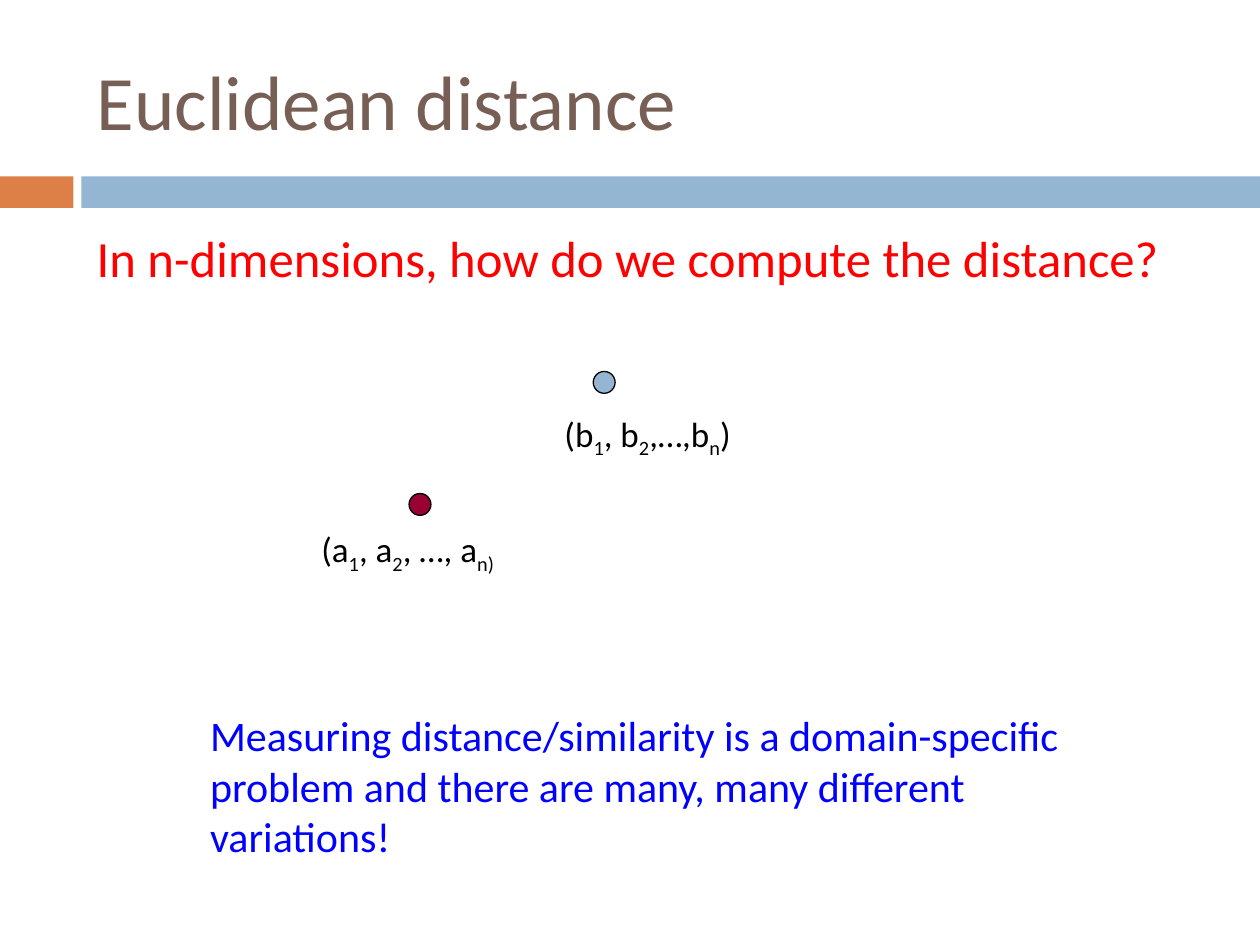
from pptx import Presentation
from pptx import util as u
from pptx.dml.color import RGBColor
from pptx.enum import shapes, text

BROWN = RGBColor(0x77, 0x5F, 0x55)
ORANGE = RGBColor(0xDD, 0x80, 0x47)
SKY = RGBColor(0x94, 0xB6, 0xD2)
MAROON = RGBColor(0x99, 0x00, 0x33)
RED = RGBColor(0xFF, 0x00, 0x00)
BLUE = RGBColor(0x00, 0x00, 0xFF)
BLACK = RGBColor(0x00, 0x00, 0x00)


def write(para, words, size=20, color=BLACK, font="Calibri", before=0):
    """Fill a paragraph, lowering every second piece between bars."""
    para.alignment = text.PP_ALIGN.LEFT
    para.space_before = u.Pt(before)
    for index, piece in enumerate(words.split("|")):
        if not piece:
            continue
        span = para.add_run()
        span.text = piece
        span.font.name = font
        span.font.size = u.Pt(size)
        span.font.color.rgb = color
        if index % 2:
            span._r.get_or_add_rPr().set("baseline", "-25000")


class Page:
    """Hold the style and the current slide."""

    def __init__(self, deck):
        self.slide = deck.slides.add_slide(deck.slide_layouts[1])
        self.dot_size = 12.5

    def place(self, box, left, top, width, height):
        box.left, box.top = u.Pt(left), u.Pt(top)
        box.width, box.height = u.Pt(width), u.Pt(height)

    def holder(self, index, words, area, anchor, **style):
        box = self.slide.placeholders[index]
        self.place(box, *area)
        frame = box.text_frame
        frame.vertical_anchor = anchor
        frame.auto_size = text.MSO_AUTO_SIZE.NONE
        para = frame.paragraphs[0]
        write(para, words, **style)
        if index:
            properties = para._p.get_or_add_pPr()
            properties.set("marL", "0")
            properties.set("indent", "0")
            properties.insert_element_before(
                properties.makeelement(
                    "{http://schemas.openxmlformats.org/drawingml/2006/main}buNone", {}),
                "a:tabLst", "a:defRPr", "a:extLst")

    def shape(self, kind, area, fill, line=None):
        box = self.slide.shapes.add_shape(kind, *map(u.Pt, area))
        box.shadow.inherit = False
        box.fill.solid()
        box.fill.fore_color.rgb = fill
        if line is None:
            box.line.fill.background()
        else:
            box.line.color.rgb = line
            box.line.width = u.Pt(0.75)

    def bar(self, left, width, fill):
        self.shape(shapes.MSO_SHAPE.RECTANGLE, (left, 100.8, width, 18), fill)

    def dot(self, left, top, fill):
        area = (left, top, self.dot_size, self.dot_size)
        self.shape(shapes.MSO_SHAPE.OVAL, area, fill, BLACK)

    def label(self, words, area, wrap=False, **style):
        box = self.slide.shapes.add_textbox(*map(u.Pt, area))
        box.text_frame.word_wrap = wrap
        box.text_frame.auto_size = text.MSO_AUTO_SIZE.SHAPE_TO_FIT_TEXT
        write(box.text_frame.paragraphs[0], words, **style)


def main():
    deck = Presentation()
    deck.slide_width, deck.slide_height = u.Pt(720), u.Pt(540)
    page = Page(deck)
    page.bar(0, 42, ORANGE)
    page.bar(46.5, 673.5, SKY)
    page.holder(0, "Euclidean distance", (48, 18, 642, 78),
                text.MSO_ANCHOR.MIDDLE, size=44, color=BROWN)
    page.holder(1, "In n-dimensions, how do we compute the distance?",
                (48, 126, 642, 46.5), text.MSO_ANCHOR.TOP,
                size=29, color=RED, before=7)
    page.dot(233.75, 282, MAROON)
    page.dot(339, 212.25, SKY)
    page.label("(a|1|, a|2|, …, a|n)|", (176.5, 298, 128, 31.5))
    page.label("(b|1|, b|2|,…,b|n|)", (315.5, 232, 119, 31.5))
    page.label("Measuring distance/similarity is a domain-specific problem "
               "and there are many, many different variations!",
               (113, 402, 540, 94.5), wrap=True, size=24, color=BLUE)
    deck.save("out.pptx")


if __name__ == "__main__":
    main()
